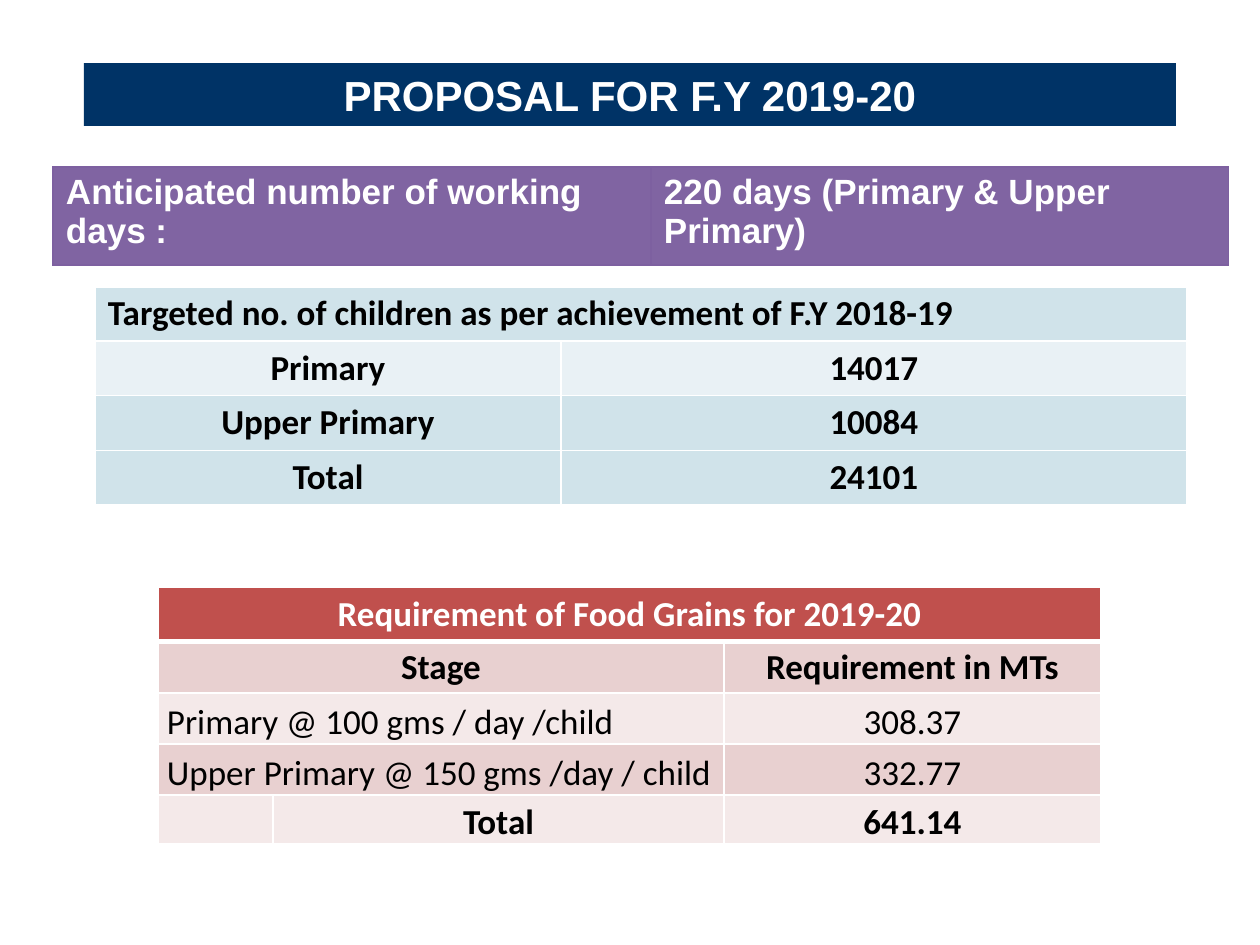
from dataclasses import dataclass

from lxml import etree
from pptx import Presentation
from pptx import util as u
from pptx.dml.color import RGBColor
from pptx.enum import text
from pptx.oxml.ns import qn

PX = u.Inches(1) / 126
LEFT, CENTER = text.PP_ALIGN.LEFT, text.PP_ALIGN.CENTER
TOP, MIDDLE, BOTTOM = (text.MSO_ANCHOR.TOP, text.MSO_ANCHOR.MIDDLE,
                       text.MSO_ANCHOR.BOTTOM)
CELL_INSET = (13, 6, 13, 6)
STAGE_INSET = (9, 0, 9, 0)
VALUE_INSET = (1, 1, 1, 0)


@dataclass(frozen=True)
class Theme:
    navy: str = "003366"
    purple: str = "8064A2"
    purple_line: str = "7D60A0"
    blue: str = "D0E3EA"
    pale_blue: str = "E9F1F5"
    red: str = "C0504D"
    pink: str = "E8D0D0"
    pale_pink: str = "F4E9E9"
    white: str = "FFFFFF"
    black: str = "000000"
    heading_font: str = "Arial"
    body_font: str = "Calibri"
    title_size: int = 24
    body_size: int = 20


T = Theme()


def emu(px):
    return u.Emu(round(px * PX))


def write(tf, words, font=T.body_font, size=T.body_size, color=T.black,
          bold=True, align=LEFT, spacing=None):
    p = tf.paragraphs[0]
    p.alignment = align
    if spacing:
        p.line_spacing = spacing
    r = p.add_run()
    r.text = words
    r.font.name = font
    r.font.size = u.Pt(size)
    r.font.bold = bold
    r.font.color.rgb = RGBColor.from_string(color)


def set_border(cell, color, **widths):
    """Draw all four sides; widths by side (L, R, T, B) replace 1 pt."""
    tc_pr = cell._tc.get_or_add_tcPr()
    for side in "LRTB":
        ln = etree.SubElement(tc_pr, qn(f"a:ln{side}"),
                              w=str(u.Pt(widths.get(side, 1))))
        fill = etree.SubElement(ln, qn("a:solidFill"))
        etree.SubElement(fill, qn("a:srgbClr"), val=color)


def add_grid(s, left, top, cols, rows):
    """Add a plain table whose columns and rows have the given sizes."""
    frame = s.shapes.add_table(len(rows), len(cols), emu(left), emu(top),
                               emu(sum(cols)), emu(sum(rows)))
    table = frame.table
    table.first_row = table.horz_banding = False
    for col, width in zip(table.columns, cols):
        col.width = emu(width)
    for row, height in zip(table.rows, rows):
        row.height = emu(height)
    return table


def fill_cell(cell, words, fill, inset=CELL_INSET, anchor=TOP, **fmt):
    cell.fill.solid()
    cell.fill.fore_color.rgb = RGBColor.from_string(fill)
    (cell.margin_left, cell.margin_top,
     cell.margin_right, cell.margin_bottom) = map(emu, inset)
    cell.vertical_anchor = anchor
    if words:
        write(cell.text_frame, words, **fmt)


def add_title(s, left, top, width, height):
    sp = s.shapes.title
    sp.left, sp.top, sp.width, sp.height = map(emu, (left, top, width, height))
    sp.fill.solid()
    sp.fill.fore_color.rgb = RGBColor.from_string(T.navy)
    sp.text_frame.vertical_anchor = MIDDLE
    write(sp.text_frame, "PROPOSAL FOR F.Y 2019-20", font=T.heading_font,
          size=T.title_size, color=T.white, align=CENTER)


def add_working_days(s, left, top):
    table = add_grid(s, left, top, [598, 578], [98])
    words = ["Anticipated number of working days :",
             "220 days (Primary & Upper Primary)"]
    for cell, line in zip(table.iter_cells(), words):
        set_border(cell, T.purple_line, L=0.75, R=0.75, T=0.75, B=0.75)
        fill_cell(cell, line, T.purple, font=T.heading_font, color=T.white)


def add_children(s, left, top):
    table = add_grid(s, left, top, [466, 626], [54] * 4)
    for i, cell in enumerate(table.iter_cells()):
        set_border(cell, T.white, T=3 if i < 2 else 1)
    table.cell(0, 0).merge(table.cell(0, 1))
    fill_cell(table.cell(0, 0),
              "Targeted no. of children as per achievement of F.Y 2018-19",
              T.blue)
    counts = [("Primary", "14017", T.pale_blue),
              ("Upper Primary", "10084", T.blue),
              ("Total", "24101", T.blue)]
    for i, (stage, count, fill) in enumerate(counts, 1):
        for j, words in enumerate((stage, count)):
            fill_cell(table.cell(i, j), words, fill, align=CENTER)


def add_food_grains(s, left, top):
    table = add_grid(s, left, top, [115, 451, 377], [54, 51, 51, 51, 48])
    for i, cell in enumerate(table.iter_cells()):
        row = i // 3
        set_border(cell, T.white, T=3 if row == 1 else 1,
                   B=3 if row == 0 else 1)

    table.cell(0, 0).merge(table.cell(0, 2))
    fill_cell(table.cell(0, 0), "Requirement of Food Grains for 2019-20",
              T.red, color=T.white, align=CENTER)

    for i in (1, 2, 3):
        table.cell(i, 0).merge(table.cell(i, 1))
    for j, words in ((0, "Stage"), (2, "Requirement in MTs")):
        fill_cell(table.cell(1, j), words, T.pink, STAGE_INSET, MIDDLE,
                  align=CENTER)

    stages = [("Primary @ 100 gms / day /child", "308.37", T.pale_pink),
              ("Upper Primary @ 150 gms /day / child", "332.77", T.pink)]
    for i, (stage, amount, fill) in enumerate(stages, 2):
        fill_cell(table.cell(i, 0), stage, fill, STAGE_INSET, BOTTOM,
                  bold=False, spacing=1.15)
        fill_cell(table.cell(i, 2), amount, fill, VALUE_INSET, BOTTOM,
                  bold=False, align=CENTER)

    fill_cell(table.cell(4, 0), "", T.pale_pink, STAGE_INSET)
    fill_cell(table.cell(4, 1), "Total", T.pale_pink, STAGE_INSET, MIDDLE,
              align=CENTER, spacing=1.15)
    fill_cell(table.cell(4, 2), "641.14", T.pale_pink, VALUE_INSET, BOTTOM,
              align=CENTER)


def main():
    prs = Presentation()
    prs.slide_width, prs.slide_height = emu(1260), emu(945)
    s = prs.slides.add_slide(prs.slide_layouts.get_by_name("Title Only"))
    add_title(s, 84, 63, 1092, 63)
    add_working_days(s, 53, 167)
    add_children(s, 95, 286)
    add_food_grains(s, 158, 587)
    prs.save("out.pptx")


if __name__ == "__main__":
    main()
